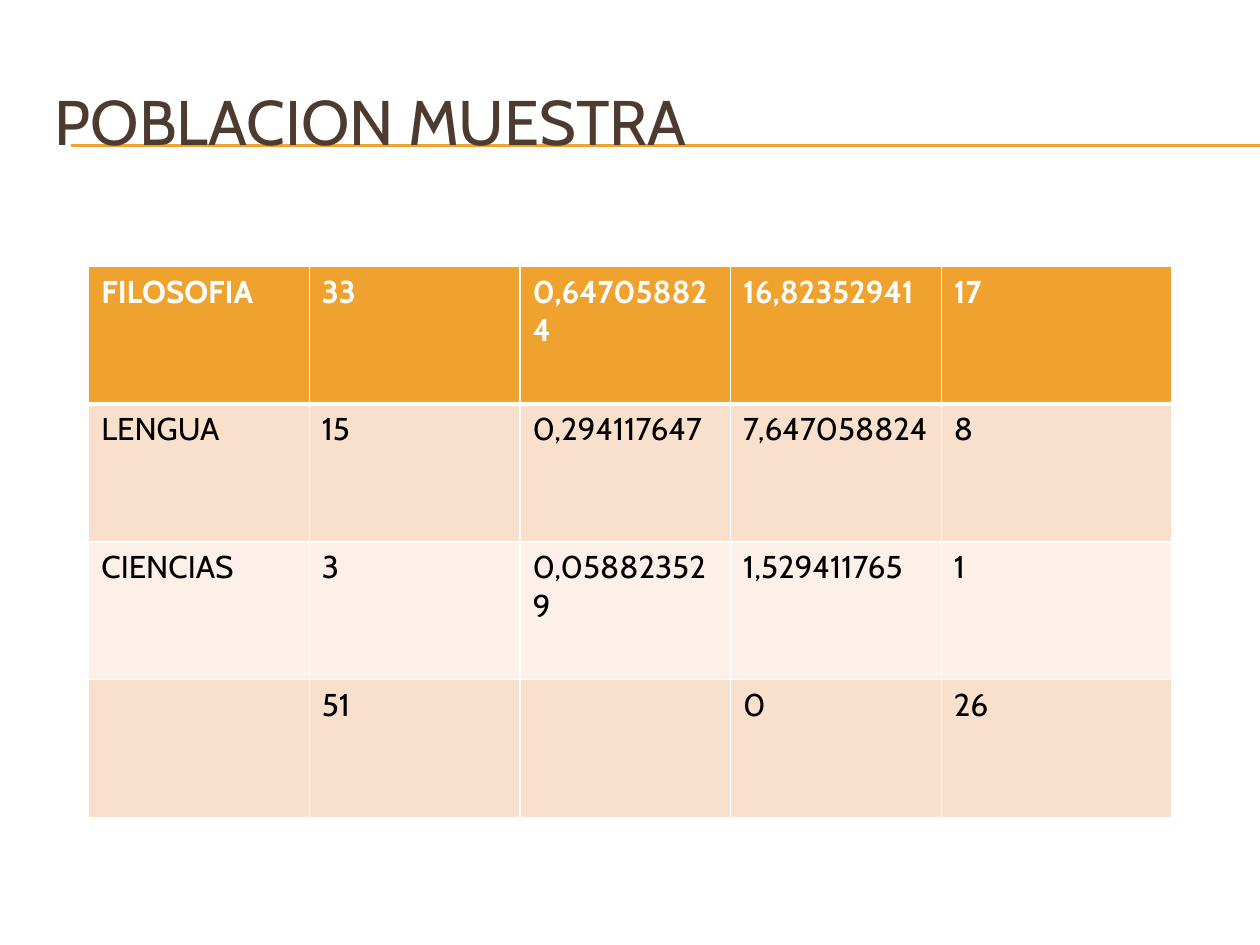
"""Build the sample population slide: a ruled title above a table."""
from lxml.etree import SubElement
from pptx import Presentation
from pptx.dml.color import RGBColor
from pptx.enum.text import MSO_ANCHOR, MSO_AUTO_SIZE, PP_ALIGN
from pptx.enum.shapes import MSO_CONNECTOR
from pptx.oxml import parse_xml
from pptx.oxml.ns import nsdecls, qn
from pptx.util import Pt

COLORS = {
    "title": "4E3B30", "accent": "F0A22E", "white": "FFFFFF",
    "black": "000000", "band": "F9E0CD", "pale": "FCF0E8",
}
FONT = "Cabin"
ROWS = [
    ["FILOSOFIA", "33", "0,647058824", "16,82352941", "17"],
    ["LENGUA", "15", "0,294117647", "7,647058824", "8"],
    ["CIENCIAS", "3", "0,058823529", "1,529411765", "1"],
    ["", "51", "", "0", "26"],
]
FILLS = ["accent", "band", "pale", "band"]
WIDTHS = [126, 120.4, 120.4, 120.4, 131.6]


def add_span(para, text, size, color, bold=False):
    span = para.add_run()
    span.text = text
    span.font.name = FONT
    span.font.size = Pt(size)
    span.font.bold = bold
    span.font.color.rgb = RGBColor.from_string(COLORS[color])


def set_borders(cell, widths):
    properties = cell._tc.get_or_add_tcPr()
    for index, (side, width) in enumerate(widths.items()):
        properties.insert(index, parse_xml(
            f'<a:ln{side} {nsdecls("a")} w="{Pt(width)}"><a:solidFill>'
            f'<a:srgbClr val="{COLORS["white"]}"/></a:solidFill></a:ln{side}>'))


deck = Presentation()
deck.slide_width, deck.slide_height = Pt(720), Pt(540)
page = deck.slides.add_slide(deck.slide_layouts[5])

for y in (82.8, 83.5):
    rule = page.shapes.add_connector(MSO_CONNECTOR.STRAIGHT, Pt(40.5), Pt(y), Pt(720), Pt(y))
    rule.line.color.rgb = RGBColor.from_string(COLORS["accent"])
    rule.line.width = Pt(0.75)
    SubElement(rule._element.spPr, qn("a:effectLst"))

title = page.shapes.title
page.shapes._spTree.append(title._element)
title.left, title.top, title.width, title.height = Pt(24), Pt(36), Pt(684), Pt(66)
frame = title.text_frame
frame.word_wrap = True
frame.auto_size = MSO_AUTO_SIZE.NONE
frame.vertical_anchor = MSO_ANCHOR.MIDDLE
para = frame.paragraphs[0]
para.alignment = PP_ALIGN.LEFT
add_span(para, "POBLACION MUESTRA", 36, "title")

table = page.shapes.add_table(
    len(ROWS), len(WIDTHS), Pt(50.7), Pt(152.2), Pt(sum(WIDTHS)), Pt(315)).table
for column, width in zip(table.columns, WIDTHS):
    column.width = Pt(width)

for row_index, (values, fill) in enumerate(zip(ROWS, FILLS)):
    header = row_index == 0
    table.rows[row_index].height = Pt(78.75)
    for column_index, value in enumerate(values):
        cell = table.cell(row_index, column_index)
        cell.fill.solid()
        cell.fill.fore_color.rgb = RGBColor.from_string(COLORS[fill])
        set_borders(cell, {"L": 1, "R": 1, "T": 3 if row_index == 1 else 1, "B": 3 if header else 1})
        if value:
            add_span(cell.text_frame.paragraphs[0], value, 18,
                     "white" if header else "black", header)

deck.save("out.pptx")
